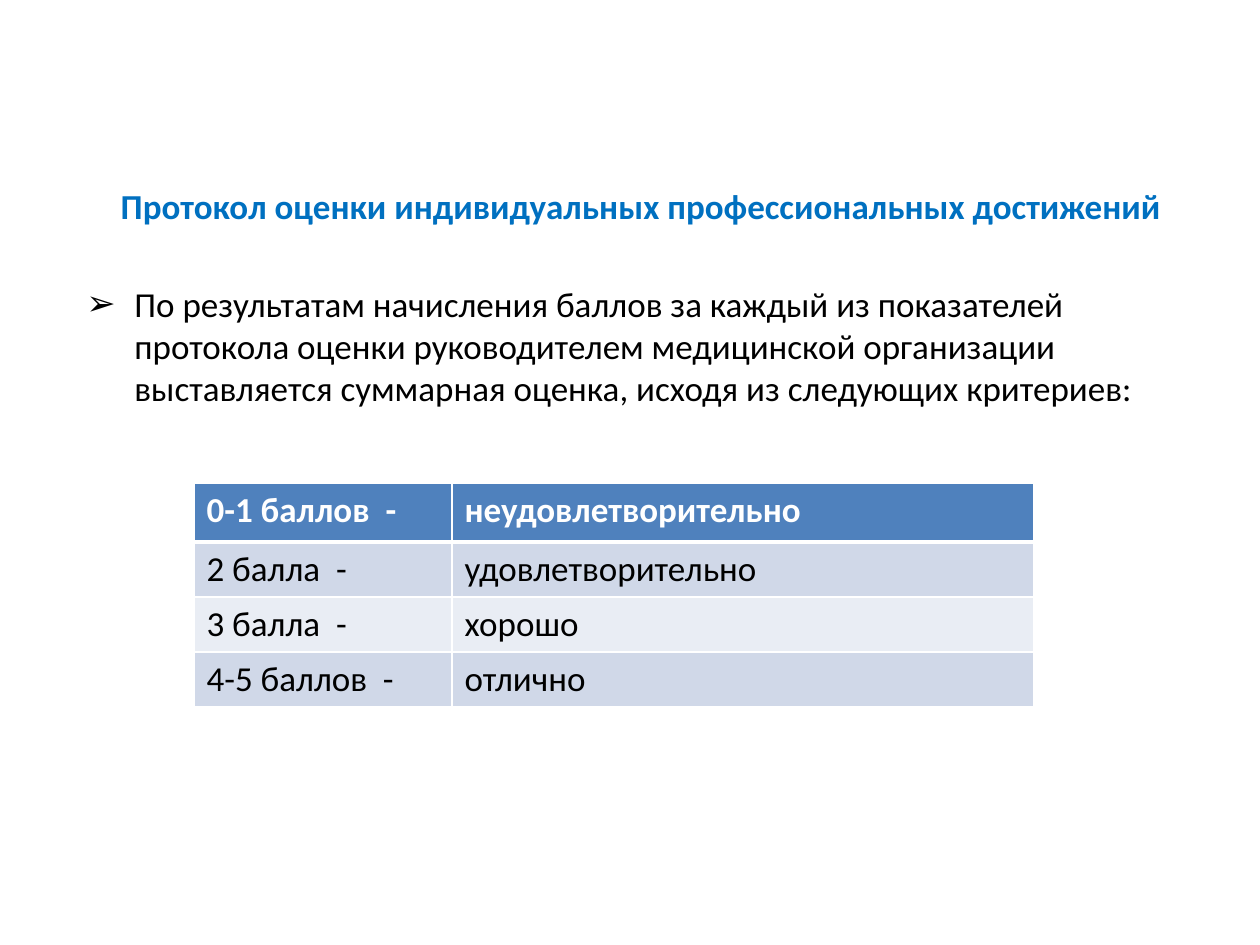
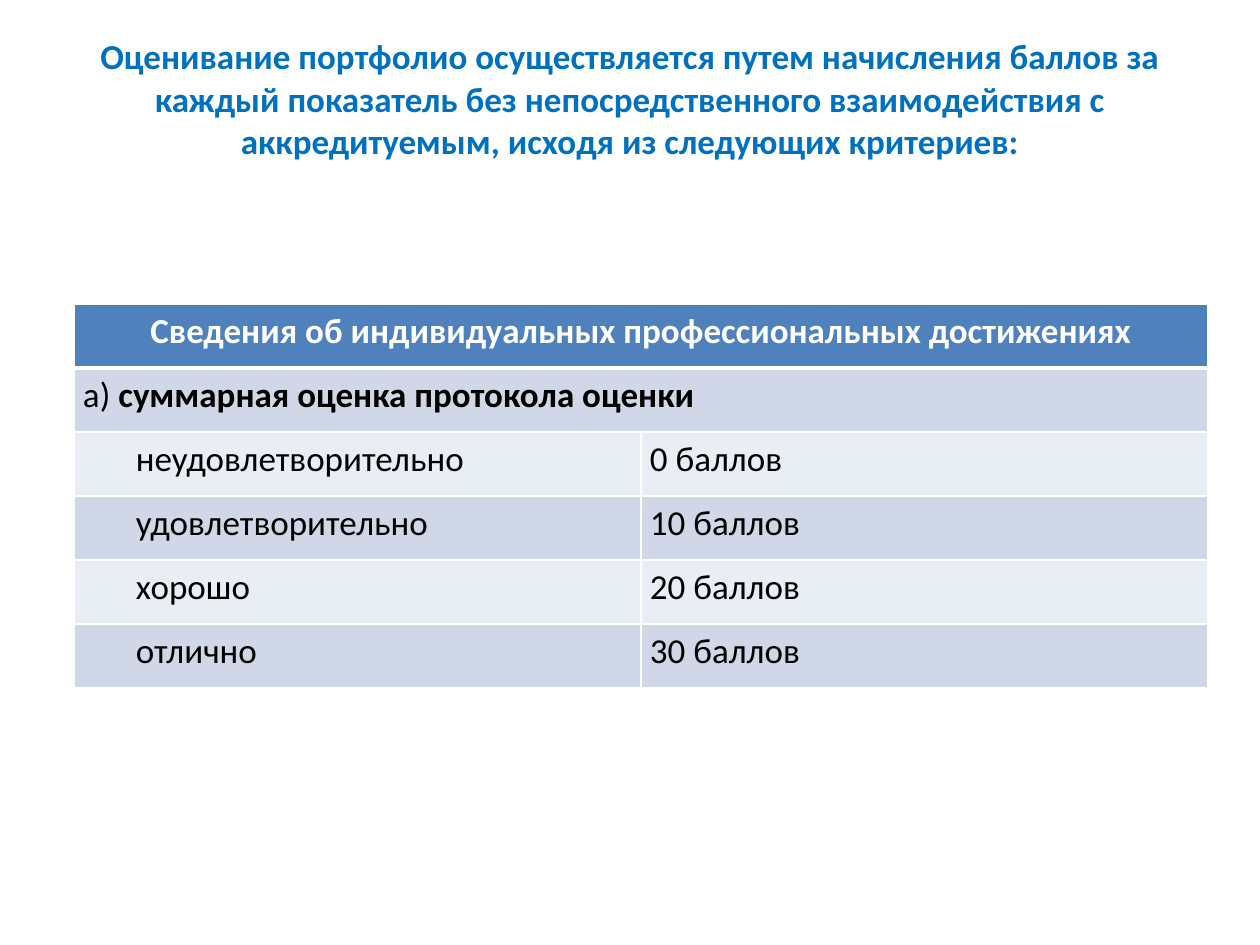
from lxml.etree import SubElement as Sub
from pptx import Presentation
from pptx.dml.color import RGBColor as RGB
from pptx.enum.text import MSO_ANCHOR as Anchor, PP_ALIGN as Align
from pptx.oxml.ns import qn
from pptx.util import Emu, Pt

SCALE = 914400 / 126
FONT = "Calibri"
SIZE = Pt(20)
BLUE = RGB(0x00, 0x70, 0xC0)
HEAD = RGB(0x4F, 0x81, 0xBD)
DARK = RGB(0xD0, 0xD8, 0xE8)
LIGHT = RGB(0xE9, 0xED, 0xF4)
WHITE = RGB(0xFF, 0xFF, 0xFF)
BLACK = RGB(0x00, 0x00, 0x00)


def px(n):
    """Turn pixels into EMU."""
    return Emu(round(n * SCALE))


def style(para, color, bold=False, align=Align.LEFT):
    """Set the shared font and the alignment of a paragraph."""
    font = para.font
    font.name, font.size, font.bold = FONT, SIZE, bold
    font.color.rgb = color
    para.alignment = align


def add_slide(deck, text, left, top, width, height):
    """Add a title-only slide with a blue centred title."""
    slide = deck.slides.add_slide(deck.slide_layouts[5])
    title = slide.shapes.title
    title.left, title.top = px(left), px(top)
    title.width, title.height = px(width), px(height)
    frame = title.text_frame
    frame.text = text
    frame.vertical_anchor = Anchor.MIDDLE
    style(frame.paragraphs[0], BLUE, True, Align.CENTER)
    return slide


def add_bullet(slide, text, left, top, width, height):
    """Add a text box with one arrow-bulleted paragraph."""
    box = slide.shapes.add_textbox(px(left), px(top), px(width), px(height))
    frame = box.text_frame
    frame.word_wrap = True
    para = frame.paragraphs[0]
    para.text = text
    style(para, BLACK)
    props = para._p.get_or_add_pPr()
    props.set("marL", str(px(48)))
    props.set("indent", str(-px(48)))
    Sub(props, qn("a:buFont"), typeface="Arial")
    Sub(props, qn("a:buChar"), char="➢")


def set_edges(cell, top, bottom):
    """Draw white cell borders with the given top and bottom points."""
    props = cell._tc.get_or_add_tcPr()
    for side, width in zip("LRTB", (1, 1, top, bottom)):
        line = Sub(props, qn(f"a:ln{side}"), w=str(Pt(width)))
        fill = Sub(line, qn("a:solidFill"))
        Sub(fill, qn("a:srgbClr"), val=str(WHITE))


def add_table(slide, left, top, widths, heights, rows):
    """Add a table with a blue head row and banded rows below."""
    frame = slide.shapes.add_table(
        len(rows), len(widths), px(left), px(top),
        px(sum(widths)), px(sum(heights)))
    table = frame.table
    for col, width in zip(table.columns, widths):
        col.width = px(width)
    for i, (row, height, texts) in enumerate(zip(table.rows, heights, rows)):
        row.height = px(height)
        for cell, text in zip(row.cells, texts):
            set_edges(cell, 3 if i == 1 else 1, 3 if i == 0 else 1)
            cell.fill.solid()
            cell.fill.fore_color.rgb = (LIGHT, DARK)[i % 2] if i else HEAD
            para = cell.text_frame.paragraphs[0]
            para.text = text
            style(para, BLACK if i else WHITE, i == 0)
    return table


def set_points(table):
    """Merge the two top rows and space the cells of the points table."""
    for i, row in enumerate(table.rows):
        for j, cell in enumerate(row.cells):
            cell.margin_left = cell.margin_right = px(9)
            cell.margin_top = cell.margin_bottom = 0
            para = cell.text_frame.paragraphs[0]
            para.line_spacing = 1.15
            if j == 0:
                para.alignment = Align.JUSTIFY if i else Align.CENTER
            if i > 1 and j == 0:
                para._p.get_or_add_pPr().set("indent", str(px(53)))
    for i in range(2):
        table.cell(i, 0).merge(table.cell(i, 1))
    run = table.cell(1, 0).text_frame.paragraphs[0].add_run()
    run.text = "суммарная оценка протокола оценки"
    run.font.bold = True


def main():
    """Build and save both slides."""
    deck = Presentation()
    deck.slide_width, deck.slide_height = px(1260), px(945)
    marks = ["неудовлетворительно", "удовлетворительно", "хорошо", "отлично"]

    slide = add_slide(
        deck, "Протокол оценки индивидуальных профессиональных достижений",
        74, 177, 1134, 56)
    add_bullet(
        slide, "По результатам начисления баллов за каждый из показателей "
        "протокола оценки руководителем медицинской организации "
        "выставляется суммарная оценка, исходя из следующих критериев:",
        74, 276, 1134, 140)
    scores = ["0-1 баллов  -", "2 балла  -", "3 балла  -", "4-5 баллов  -"]
    add_table(slide, 194, 483, [258, 582], [59] + [55] * 3,
              list(zip(scores, marks)))

    slide = add_slide(
        deck, "Оценивание портфолио осуществляется путем начисления баллов "
        "за каждый показатель без непосредственного взаимодействия с "
        "аккредитуемым, исходя из следующих критериев:",
        63, 26, 1134, 144)
    rows = [("Сведения об индивидуальных профессиональных достижениях", ""),
            ("а) ", "")]
    rows += [(mark, f"{10 * i} баллов") for i, mark in enumerate(marks)]
    table = add_table(slide, 74, 304, [567] * 2, [64] * 6, rows)
    set_points(table)

    deck.save("out.pptx")


if __name__ == "__main__":
    main()
